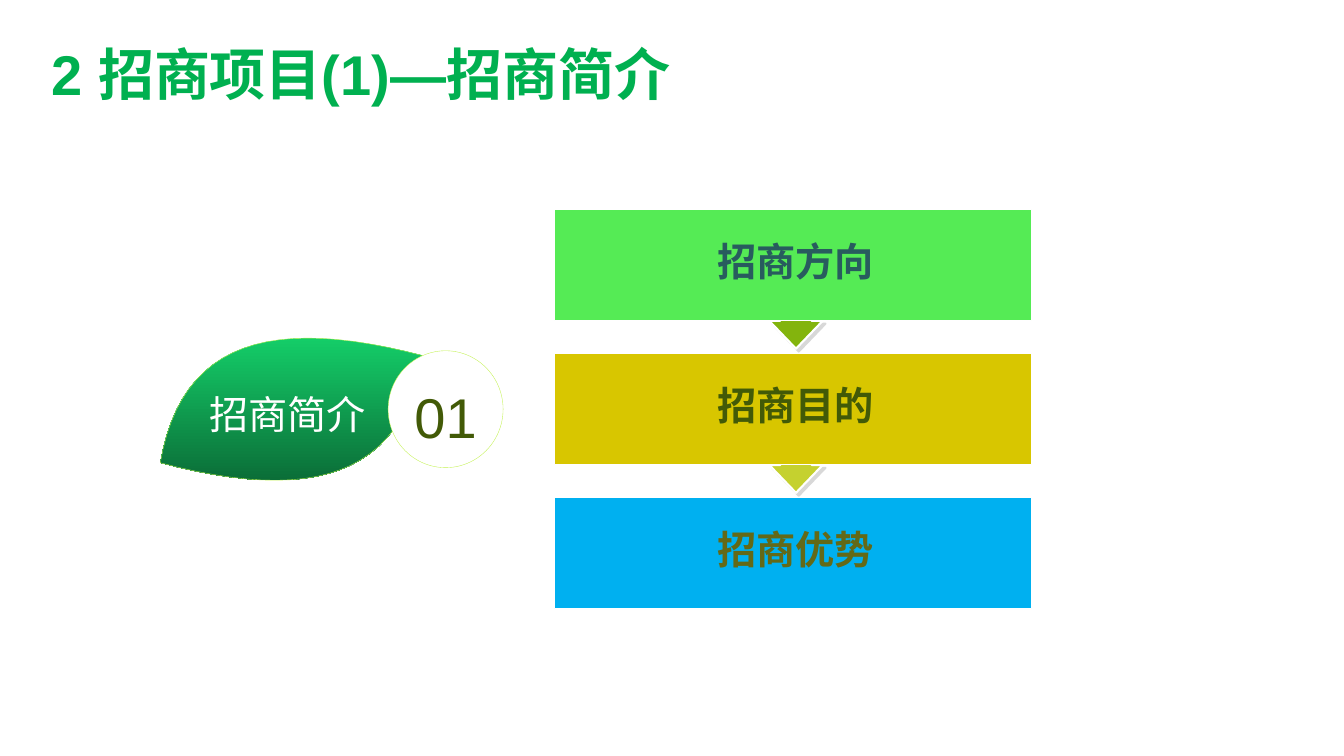
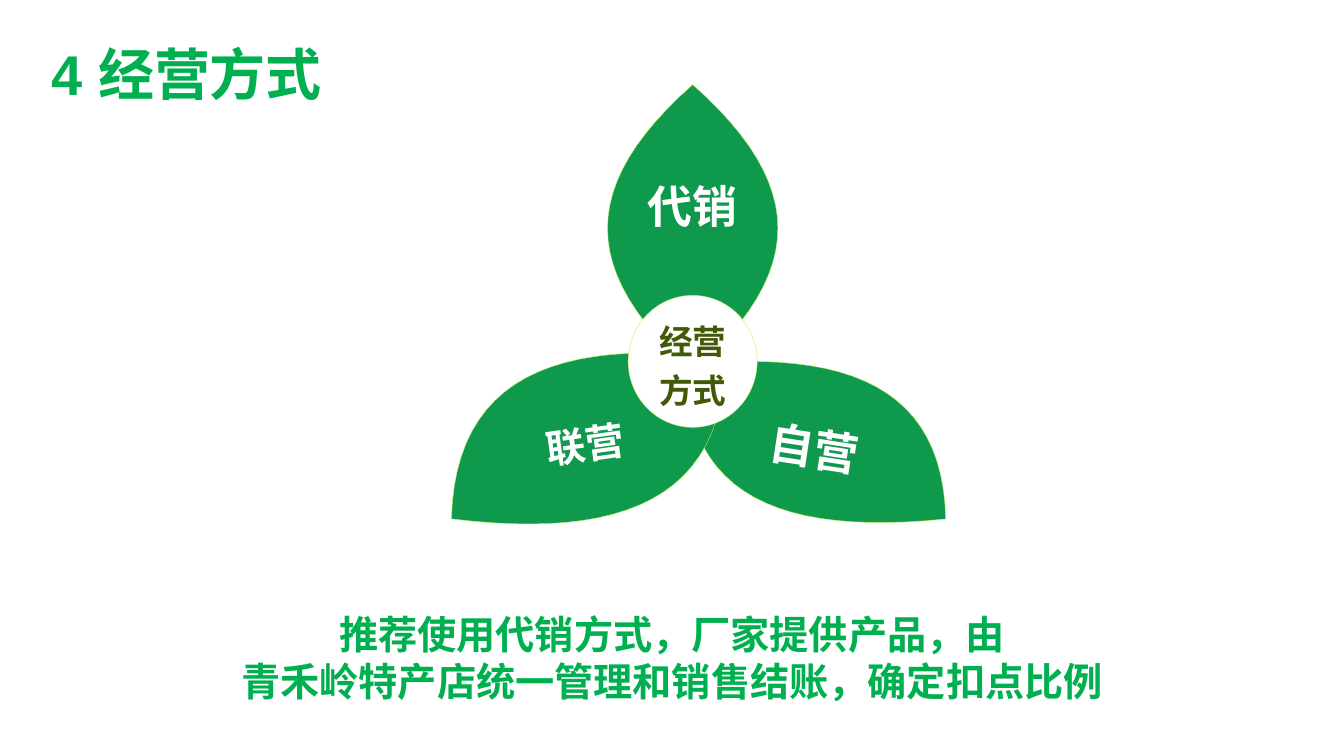
from lxml import etree
from pptx import Presentation
from pptx.dml.color import RGBColor
from pptx.enum.shapes import MSO_SHAPE
from pptx.enum.text import MSO_ANCHOR, MSO_AUTO_SIZE, PP_ALIGN
from pptx.oxml.ns import qn
from pptx.util import Inches, Pt

RECT, OVAL, ARROW = MSO_SHAPE.RECTANGLE, MSO_SHAPE.OVAL, MSO_SHAPE.DOWN_ARROW
MIDDLE, BOTTOM = MSO_ANCHOR.MIDDLE, MSO_ANCHOR.BOTTOM
LEFT, CENTER = PP_ALIGN.LEFT, PP_ALIGN.CENTER
NO_FIT = MSO_AUTO_SIZE.NONE
TITLE_ONLY = 5

FONT = "Arial"
WHITE = "FFFFFF"
BRIGHT_GREEN = "00B050"
LEAF_GREEN = "0F994D"
LEAF_GRADIENT = ("14CD68", "0B6E38")
LEAF_EDGE = "C2F24E"
OLIVE = "425A07"
SHADOW_GREY = "B2B2B2"

UPRIGHT = ((0.5, 0), (1.17, 0.35), (1.17, 0.65))
RISING = ((0, 0.88), (0.08, 0.01), (0.43, -0.16))
FALLING = tuple((1 - x, y) for x, y in RISING)


def rgb(value):
    """Turn a hex string into a colour."""
    return RGBColor.from_string(value)


def write(frame, text, size, color, bold=True, align=CENTER, spacing=1.0):
    """Fill a text frame and format all its paragraphs alike."""
    frame.word_wrap = True
    frame.text = text
    for paragraph in frame.paragraphs:
        paragraph.alignment = align
        paragraph.line_spacing = spacing
        for run in paragraph.runs:
            run.font.name = FONT
            run.font.size = Pt(size)
            run.font.bold = bold
            run.font.color.rgb = rgb(color)


def set_insets(frame, left=0, top=0, right=0, bottom=0):
    """Set the four text margins and centre the text vertically."""
    frame.margin_left, frame.margin_top = Inches(left), Inches(top)
    frame.margin_right, frame.margin_bottom = Inches(right), Inches(bottom)
    frame.vertical_anchor = MIDDLE


def paint(shape, fill, edge, width):
    """Give a shape a plain fill and outline without a shadow."""
    shape.shadow.inherit = False
    shape.fill.solid()
    shape.fill.fore_color.rgb = rgb(fill)
    shape.line.color.rgb = rgb(edge)
    shape.line.width = Pt(width)


def add_preset(slide, preset, box, fill, edge=WHITE, width=0.75):
    """Add a painted preset shape in a box given in inches."""
    shape = slide.shapes.add_shape(preset, *map(Inches, box))
    paint(shape, fill, edge, width)
    return shape


def leaf_points(box, outline, steps=24):
    """Trace a leaf whose second edge is its first turned half round."""
    left, top, width, height = box
    tip, bend_out, bend_in = outline
    end = (1 - tip[0], 1 - tip[1])
    edge = []
    for step in range(steps):
        t = step / steps
        weights = ((1 - t) ** 3, 3 * t * (1 - t) ** 2, 3 * t * t * (1 - t), t ** 3)
        corners = (tip, bend_out, bend_in, end)
        edge.append([sum(w * c[axis] for w, c in zip(weights, corners)) for axis in (0, 1)])
    edge += [[1 - x, 1 - y] for x, y in edge]
    return [(Inches(left + x * width), Inches(top + y * height)) for x, y in edge]


def add_leaf(slide, box, outline, label, size, insets, rotation=0, bold=True):
    """Add a labelled leaf."""
    start, *others = leaf_points(box, outline)
    builder = slide.shapes.build_freeform(*start)
    builder.add_line_segments(others, close=True)
    leaf = builder.convert_to_shape()
    paint(leaf, LEAF_GREEN, LEAF_EDGE, 0.25)
    leaf.rotation = rotation
    set_insets(leaf.text_frame, *insets)
    write(leaf.text_frame, label, size, WHITE, bold, spacing=1.2)
    return leaf


def add_hub(slide, box, label, size, bold):
    """Add the white circle that sits over the leaf tips."""
    hub = add_preset(slide, OVAL, box, WHITE, LEAF_EDGE, 0.25)
    set_insets(hub.text_frame)
    write(hub.text_frame, label, size, OLIVE, bold, spacing=1.2)


def add_step_arrow(slide, left, top, fill):
    """Add a down arrow with a hard diagonal shadow."""
    arrow = add_preset(slide, ARROW, (left, top, 0.53, 0.46), fill, width=1.5)
    arrow.adjustments[0], arrow.adjustments[1] = 0.589, 0.6
    effects = arrow._element.spPr.find(qn("a:effectLst"))
    shadow = etree.SubElement(effects, qn("a:outerShdw"), blurRad="0",
                              dist=str(Pt(2.8)), dir="2700000", algn="ctr")
    tint = etree.SubElement(shadow, qn("a:srgbClr"), val=SHADOW_GREY)
    etree.SubElement(tint, qn("a:alpha"), val="50000")


def add_steps(slide, left, top, steps, arrow_fills):
    """Stack the step bars with an arrow under each but the last."""
    width, height, pitch = 4.73, 1.1, 1.43
    for row, fill in enumerate(arrow_fills):
        add_step_arrow(slide, left + 2.13, top + row * pitch + height - 0.18, fill)
    for row, (label, fill, color) in enumerate(steps):
        bar = add_preset(slide, RECT, (left, top + row * pitch, width, height), fill)
        set_insets(bar.text_frame, left=0.05, bottom=0.09)
        write(bar.text_frame, label, 28, color)


def add_titled_slide(prs, heading):
    """Add a slide with the shared title style."""
    slide = prs.slides.add_slide(prs.slide_layouts[TITLE_ONLY])
    title = slide.shapes.title
    title.left, title.top = Inches(0.41), Inches(0.18)
    title.width, title.height = Inches(7.66), Inches(0.94)
    title.text_frame.auto_size = NO_FIT
    title.text_frame.vertical_anchor = BOTTOM
    write(title.text_frame, heading, 40, BRIGHT_GREEN, align=LEFT, spacing=0.9)
    return slide


def build_introduction(prs):
    """Build the slide with the numbered leaf and three steps."""
    slide = add_titled_slide(prs, "2 招商项目(1)—招商简介")
    leaf = add_leaf(slide, (1.59, 3.36, 2.6, 1.4), RISING, "招商简介", 28,
                    (0, 0.04, 0.08, 0.04), bold=False)
    leaf.fill.gradient()
    leaf.fill.gradient_angle = 270
    for position, (stop, color) in enumerate(zip(leaf.fill.gradient_stops, LEAF_GRADIENT)):
        stop.position = position
        stop.color.rgb = rgb(color)
    add_hub(slide, (3.85, 3.48, 1.14, 1.16), "01", 40, False)
    steps = [
        ("招商方向", "55EB55", "285C5E"),
        ("招商目的", "D8C600", OLIVE),
        ("招商优势", "00B0F0", "636917"),
    ]
    add_steps(slide, 5.5, 2.08, steps, ("83B40D", "C5D12F"))


def build_operation(prs):
    """Build the slide with three leaves around a hub and a closing note."""
    slide = add_titled_slide(prs, "4 经营方式")
    add_leaf(slide, (6.03, 0.84, 1.68, 2.85), UPRIGHT, "代销", 32, (0.08, 0.04, 0.08, 0.59))
    add_leaf(slide, (6.69, 3.65, 2.79, 1.47), FALLING, "自营", 32, (0, 0, 0, 0), 8.7)
    add_leaf(slide, (4.38, 3.56, 2.92, 1.58), RISING, "联营", 28, (0, 0.04, 0.08, 0.04), 352)
    add_hub(slide, (6.23, 2.93, 1.28, 1.31), "经营方式", 24, True)
    note = slide.shapes.add_textbox(*map(Inches, (1.5, 6.01, 10.33, 1.03)))
    advice = "推荐使用代销方式，厂家提供产品，由\n青禾岭特产店统一管理和销售结账，确定扣点比例"
    write(note.text_frame, advice, 28, BRIGHT_GREEN)


def main():
    """Build and save the presentation."""
    prs = Presentation()
    prs.slide_width, prs.slide_height = Inches(13.33), Inches(7.5)
    build_introduction(prs)
    build_operation(prs)
    prs.save("out.pptx")


if __name__ == "__main__":
    main()
